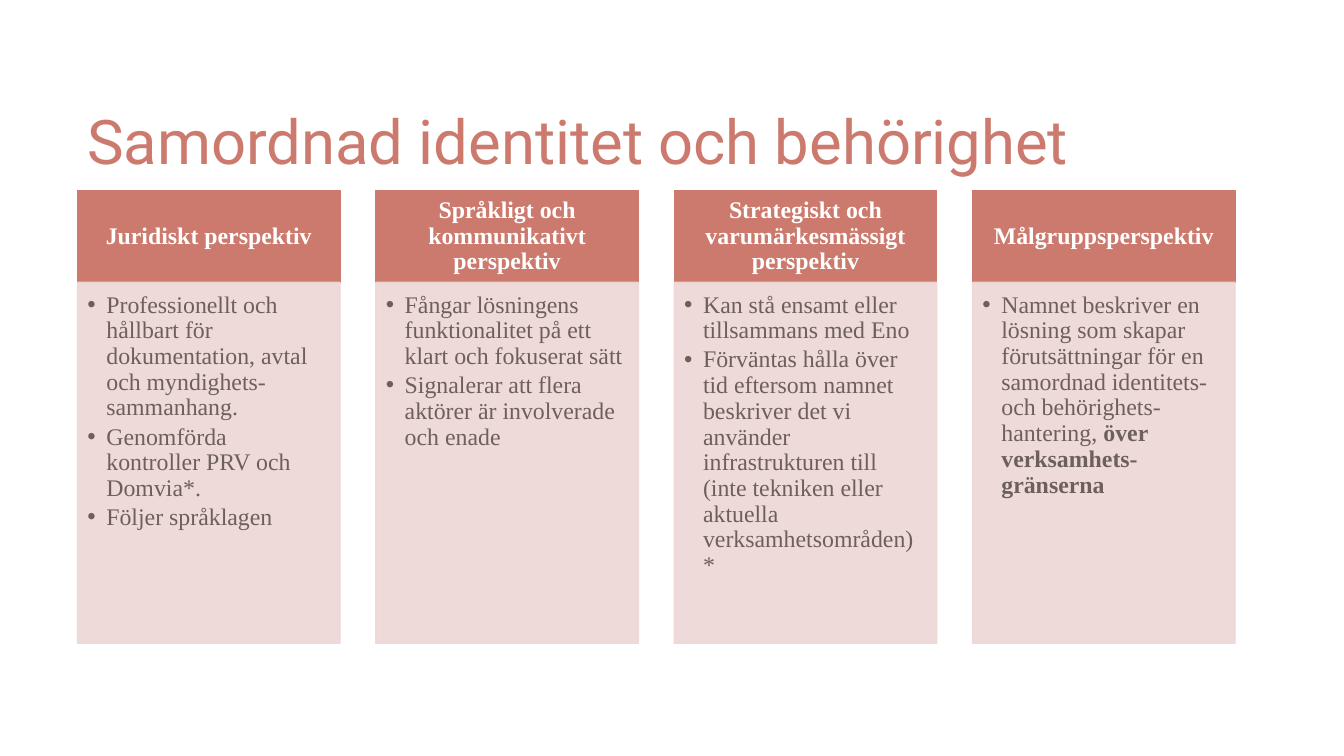
from lxml.etree import SubElement
from pptx import Presentation
from pptx.dml.color import RGBColor
from pptx.enum.shapes import MSO_SHAPE
from pptx.enum.text import MSO_ANCHOR, PP_ALIGN
from pptx.oxml.ns import qn
from pptx.util import Pt

COLORS = {"coral": "CD7A6E", "blush": "EDD7D5", "brown": "6D6059", "white": "FFFFFF"}

# Each column: heading, then bullets made of (text, bold) spans
COLUMNS = [
    ("Juridiskt perspektiv", [
        [("Professionellt och hållbart för dokumentation, avtal och myndighets-sammanhang.", False)],
        [("Genomförda kontroller PRV och Domvia*.", False)],
        [("Följer språklagen", False)],
    ]),
    ("Språkligt och kommunikativt perspektiv", [
        [("Fångar lösningens funktionalitet på ett klart och fokuserat sätt", False)],
        [("Signalerar att flera aktörer är involverade och enade", False)],
    ]),
    ("Strategiskt och varumärkesmässigt perspektiv", [
        [("Kan stå ensamt eller tillsammans med Eno", False)],
        [("Förväntas hålla över tid eftersom namnet beskriver det vi använder infrastrukturen "
          "till (inte tekniken eller aktuella verksamhetsområden)*", False)],
    ]),
    ("Målgruppsperspektiv", [
        [("Namnet beskriver en lösning som skapar förutsättningar för en samordnad identitets- "
          "och behörighets-hantering, ", False), ("över verksamhets-gränserna", True)],
    ]),
]

LEFT, PITCH, WIDTH = 55.4, 213.1, 187.5
HEADER_TOP, HEADER_HEIGHT, BODY_HEIGHT = 136.1, 65.6, 257.8


class SlideBuilder:
    title_font = "Roboto"
    body_font = "Times New Roman"
    body_size = 17

    def __init__(self, page):
        self.page = page

    def frame(self, shape, insets, anchor):
        frame = shape.text_frame
        frame.word_wrap = True
        frame.vertical_anchor = anchor
        (frame.margin_left, frame.margin_top,
         frame.margin_right, frame.margin_bottom) = [Pt(inset) for inset in insets]
        return frame

    def add_spans(self, para, spans, font, size, color, align=PP_ALIGN.LEFT):
        para.alignment = align
        para.line_spacing = 0.9
        for text, bold in spans:
            span = para.add_run()
            span.text = text
            span.font.name = font
            span.font.size = Pt(size)
            span.font.bold = bold
            span.font.color.rgb = RGBColor.from_string(COLORS[color])

    def title(self, text, left, top, width, height):
        box = self.page.shapes.add_textbox(Pt(left), Pt(top), Pt(width), Pt(height))
        frame = self.frame(box, (7.2, 3.6, 7.2, 3.6), MSO_ANCHOR.BOTTOM)
        self.add_spans(frame.paragraphs[0], [(text, False)], self.title_font, 44, "coral")

    def panel(self, left, top, height, color, opacity=100):
        box = self.page.shapes.add_shape(
            MSO_SHAPE.RECTANGLE, Pt(left), Pt(top), Pt(WIDTH), Pt(height))
        box.shadow.inherit = False
        box.fill.solid()
        box.line.width = Pt(1)
        box.line.fill.solid()
        for paint in (box.fill.fore_color, box.line.color):
            paint.rgb = RGBColor.from_string(COLORS[color])
        if opacity < 100:
            for tint in box._element.spPr.iter(qn("a:srgbClr")):
                SubElement(tint, qn("a:alpha"), val=str(opacity * 1000))
        return box

    def header(self, text, left):
        box = self.panel(left, HEADER_TOP, HEADER_HEIGHT, "coral")
        frame = self.frame(box, (9.4, 5.5, 9.4, 5.5), MSO_ANCHOR.MIDDLE)
        self.add_spans(frame.paragraphs[0], [(text, True)], self.body_font,
                       self.body_size, "white", PP_ALIGN.CENTER)

    def bullets(self, items, left):
        box = self.panel(left, HEADER_TOP + HEADER_HEIGHT, BODY_HEIGHT, "blush", 90)
        frame = self.frame(box, (7.2, 7.2, 9.4, 10.8), MSO_ANCHOR.TOP)
        for index, spans in enumerate(items):
            para = frame.add_paragraph() if index else frame.paragraphs[0]
            para.space_after = Pt(2.5)
            self.add_spans(para, spans, self.body_font, self.body_size, "brown")
            properties = para._p.get_or_add_pPr()
            properties.set("marL", str(Pt(13.5)))
            properties.set("indent", str(-Pt(13.5)))
            SubElement(properties, qn("a:buFont"), typeface="Arial")
            SubElement(properties, qn("a:buChar"), char="•")


def main():
    deck = Presentation()
    deck.slide_width, deck.slide_height = Pt(960), Pt(540)
    builder = SlideBuilder(deck.slides.add_slide(deck.slide_layouts[6]))

    # Title
    builder.title("Samordnad identitet och behörighet", LEFT, 68.4, 753, 61.9)

    # Perspective columns
    for index, (heading, items) in enumerate(COLUMNS):
        left = LEFT + index * PITCH
        builder.header(heading, left)
        builder.bullets(items, left)

    deck.save("out.pptx")


if __name__ == "__main__":
    main()
